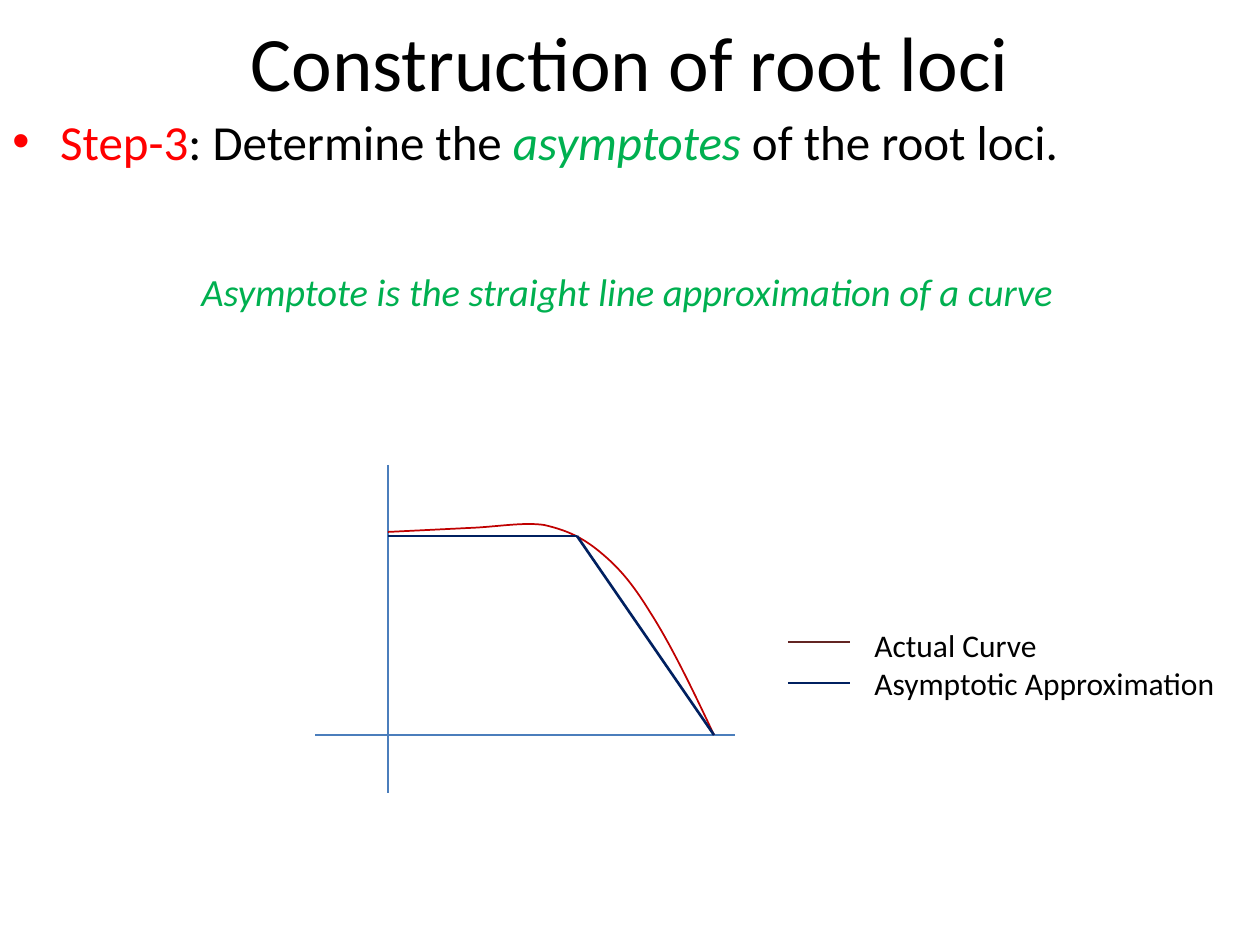
from lxml.etree import SubElement
from pptx import Presentation
from pptx.dml.color import RGBColor
from pptx.enum.shapes import MSO_CONNECTOR
from pptx.enum.text import MSO_ANCHOR, MSO_AUTO_SIZE, PP_ALIGN
from pptx.oxml.ns import qn
from pptx.util import Emu, Inches, Pt

PX = Inches(1) / 126
FONT = "Calibri"
COLORS = {
    "text": "000000",
    "step": "FF0000",
    "term": "00B050",
    "axis": "4B7EBC",
    "curve": "C00000",
    "curve_key": "632523",
    "asymptote": "002060",
}


def px(value):
    return Emu(round(value * PX))


def set_all(target, **values):
    for name, value in values.items():
        setattr(target, name, value)


class SlideBuilder:
    """Holds the style and the current slide."""

    def __init__(self, deck):
        self.page = deck.slides.add_slide(deck.slide_layouts[5])
        self.shapes = self.page.shapes

    def add_spans(self, para, spans, size):
        """Add (text, color name, italic) spans to a paragraph."""
        for text, color, italic in spans:
            span = para.add_run()
            span.text = text
            set_all(span.font, name=FONT, size=Pt(size), italic=italic)
            span.font.color.rgb = RGBColor.from_string(COLORS[color])

    def title(self, at, text):
        box = self.shapes.title
        set_all(box, **dict(zip(("left", "top", "width", "height"), map(px, at))))
        set_all(box.text_frame, word_wrap=True, vertical_anchor=MSO_ANCHOR.MIDDLE)
        para = box.text_frame.paragraphs[0]
        para.alignment = PP_ALIGN.CENTER
        self.add_spans(para, [(text, "text", False)], 44)

    def text(self, at, lines, size, wrap=False):
        frame = self.shapes.add_textbox(*map(px, at)).text_frame
        fit = MSO_AUTO_SIZE.NONE if wrap else MSO_AUTO_SIZE.SHAPE_TO_FIT_TEXT
        set_all(frame, word_wrap=wrap, auto_size=fit)
        for index, spans in enumerate(lines):
            para = frame.add_paragraph() if index else frame.paragraphs[0]
            self.add_spans(para, spans, size)
        return frame

    def bullet(self, at, spans, size):
        para = self.text(at, [spans], size, wrap=True).paragraphs[0]
        set_all(para, alignment=PP_ALIGN.JUSTIFY, space_before=Pt(size * 0.2))
        props = para._p.get_or_add_pPr()
        indent = Inches(0.38)
        props.set("marL", str(indent))
        props.set("indent", str(-indent))
        SubElement(props, qn("a:buFont"), typeface="Arial")
        SubElement(props, qn("a:buChar"), char="•")

    def stroke(self, shape, color, width):
        shape.line.color.rgb = RGBColor.from_string(COLORS[color])
        shape.line.width = Pt(width)

    def line(self, start, end, color, width):
        ends = map(px, (*start, *end))
        connector = self.shapes.add_connector(MSO_CONNECTOR.STRAIGHT, *ends)
        self.stroke(connector, color, width)
        SubElement(connector._element.spPr, qn("a:effectLst"))

    def curve(self, start, lead, controls, color, width):
        """Draw a straight lead, then cubic arcs of three control points each."""
        builder = self.shapes.build_freeform(*map(px, start))
        points = [tuple(map(px, point)) for point in (lead, *controls)]
        builder.add_line_segments(points, close=False)
        shape = builder.convert_to_shape()
        shape.shadow.inherit = False
        shape.fill.background()
        self.stroke(shape, color, width)
        outline = next(shape._element.iter(qn("a:path")))
        steps = outline.findall(qn("a:lnTo"))[1:]
        for first in range(0, len(steps), 3):
            arc = SubElement(outline, qn("a:cubicBezTo"))
            for step in steps[first:first + 3]:
                arc.append(step[0])
                outline.remove(step)


def main():
    deck = Presentation()
    set_all(deck, slide_width=Inches(10), slide_height=Inches(7.5))
    slide = SlideBuilder(deck)

    slide.title((63, 6, 1134, 110), "Construction of root loci")
    slide.bullet((0, 105, 1134, 108), [
        ("Step-3", "step", False),
        (": Determine the ", "text", False),
        ("asymptotes", "term", True),
        (" of the root loci.", "text", False),
    ], 28)
    definition = "Asymptote is the straight line approximation of a curve"
    slide.text((189, 262, 893, 59), [[(definition, "term", True)]], 22)

    axis_x, axis_y = 388, 735
    slide.line((315, axis_y), (735, axis_y), "axis", 0.75)
    slide.line((axis_x, 465), (axis_x, 793), "axis", 0.75)

    corner, crossing = (577, 536), (714, axis_y)
    slide.curve((axis_x, 532), (470, 528), [
        (496, 527), (523, 522), (544, 525),
        (566, 530), (582, 537), (600, 552),
        (617, 566), (631, 581), (650, 612),
        (670, 643), (692, 688), crossing,
    ], "curve", 1)
    slide.line((axis_x, 536), corner, "asymptote", 1.5)
    slide.line(corner, crossing, "asymptote", 1.5)

    legend = [("Actual Curve", "curve_key", 642),
              ("Asymptotic Approximation", "asymptote", 683)]
    slide.text((862, 620, 367, 89),
               [[(label, "text", False)] for label, _, _ in legend], 18)
    for _, color, y in legend:
        slide.line((788, y), (850, y), color, 1.5)

    deck.save("out.pptx")


if __name__ == "__main__":
    main()
